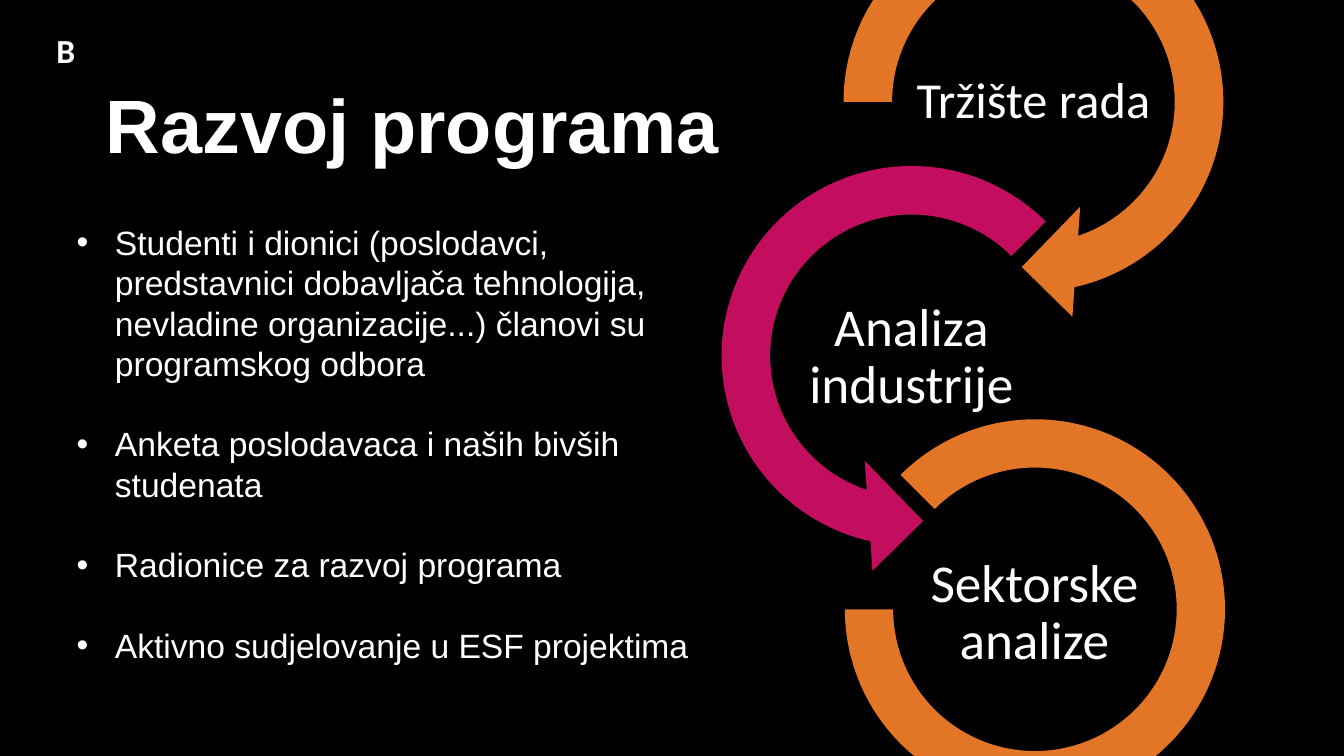
import pptx
import pptx.util
import pptx.dml.color
import pptx.enum.shapes
import pptx.enum.text

PX = 9144  # EMU per px, 100 px to the inch
COLORS = {"black": "000000", "white": "FFFFFF", "orange": "E37626", "magenta": "C30E60"}
SHAPES = pptx.enum.shapes.MSO_SHAPE
ALIGN = pptx.enum.text.PP_ALIGN
ANCHOR = pptx.enum.text.MSO_ANCHOR


def px(n):
    return pptx.util.Emu(n * PX)


def deg(angle):
    """Angle as an adjustment value (60000ths of a degree over 100000)."""
    return angle * 0.6


def rgb(name):
    return pptx.dml.color.RGBColor.from_string(COLORS[name])


class Deck:
    def __init__(self, width, height):
        self.prs = pptx.Presentation()
        self.prs.slide_width, self.prs.slide_height = px(width), px(height)
        self.s = self.prs.slides.add_slide(self.prs.slide_layouts[1])
        fill = self.s.background.fill
        fill.solid()
        fill.fore_color.rgb = rgb("black")

    def place(self, sp, box):
        sp.left, sp.top, sp.width, sp.height = map(px, box)

    def style(self, p, size, font, bold=False):
        for r in p.runs:
            r.font.size = pptx.util.Pt(size)
            r.font.name = font
            r.font.bold = bold
            r.font.color.rgb = rgb("white")

    def title(self, text, box):
        sp = self.s.shapes.title
        self.place(sp, box)
        tf = sp.text_frame
        tf.text = text
        tf.vertical_anchor = ANCHOR.MIDDLE
        p = tf.paragraphs[0]
        p.alignment = ALIGN.LEFT
        p.line_spacing = 0.9
        self.style(p, 54, "Arial", True)

    def bullets(self, items, box, indent=38, line=28.8):
        sp = self.s.placeholders[1]
        self.place(sp, box)
        tf = sp.text_frame
        tf.auto_size = pptx.enum.text.MSO_AUTO_SIZE.NONE
        for i, item in enumerate(items):
            p = tf.add_paragraph() if i else tf.paragraphs[0]
            p.text = item
            pPr = p._p.get_or_add_pPr()
            pPr.set("marL", str(indent * PX))
            pPr.set("indent", str(-indent * PX))
            p.line_spacing = pptx.util.Pt(line)
            p.space_before = pptx.util.Pt(line if i else 0)
            self.style(p, 24, "Arial")

    def ring(self, kind, box, color, adjustments):
        sp = self.s.shapes.add_shape(kind, *map(px, box))
        sp.shadow.inherit = False
        sp.fill.solid()
        sp.fill.fore_color.rgb = rgb(color)
        sp.line.fill.background()
        for i, value in enumerate(adjustments):
            sp.adjustments[i] = value

    def label(self, text, box, size):
        tf = self.s.shapes.add_textbox(*map(px, box)).text_frame
        tf.text = text
        tf.word_wrap = True
        tf.vertical_anchor = ANCHOR.MIDDLE
        tf.margin_left = tf.margin_right = tf.margin_top = tf.margin_bottom = px(3)
        p = tf.paragraphs[0]
        p.alignment = ALIGN.CENTER
        p.line_spacing = 0.9
        self.style(p, size, "Calibri")

    def marker(self, text, box):
        tf = self.s.shapes.add_textbox(*map(px, box)).text_frame
        tf.text = text
        tf.word_wrap = False
        self.style(tf.paragraphs[0], 24, "Calibri", True)


def main():
    deck = Deck(1333, 750)

    # Heading and section letter
    deck.title("Razvoj programa", (95, 18, 659, 220))
    deck.marker("B", (46, 25, 39, 50))

    # Chain of rings
    deck.ring(SHAPES.CIRCULAR_ARROW, (806, -118, 438, 438), "orange",
              (0.11, deg(19.04), deg(75), deg(180), 0.125))
    deck.ring(SHAPES.LEFT_CIRCULAR_ARROW, (685, 134, 438, 438), "magenta",
              (0.11, deg(19.04), deg(105), deg(315), 0.125))
    deck.ring(SHAPES.BLOCK_ARC, (838, 416, 377, 377), "orange",
              (deg(225), deg(180), 0.127))

    # Ring labels
    for text, left, top, size in (("Tržište rada", 903, 40, 36),
                                  ("Analiza industrije", 782, 294, 38),
                                  ("Sektorske analize", 904, 548, 38)):
        deck.label(text, (left, top, 244, 122), size)

    # Programme development activities
    deck.bullets((
        "Studenti i dionici (poslodavci, predstavnici dobavljača tehnologija, "
        "nevladine organizacije...) članovi su programskog odbora",
        "Anketa poslodavaca i naših bivših studenata",
        "Radionice za razvoj programa",
        "Aktivno sudjelovanje u ESF projektima",
    ), (66, 215, 638, 454))

    deck.prs.save("out.pptx")


if __name__ == "__main__":
    main()
